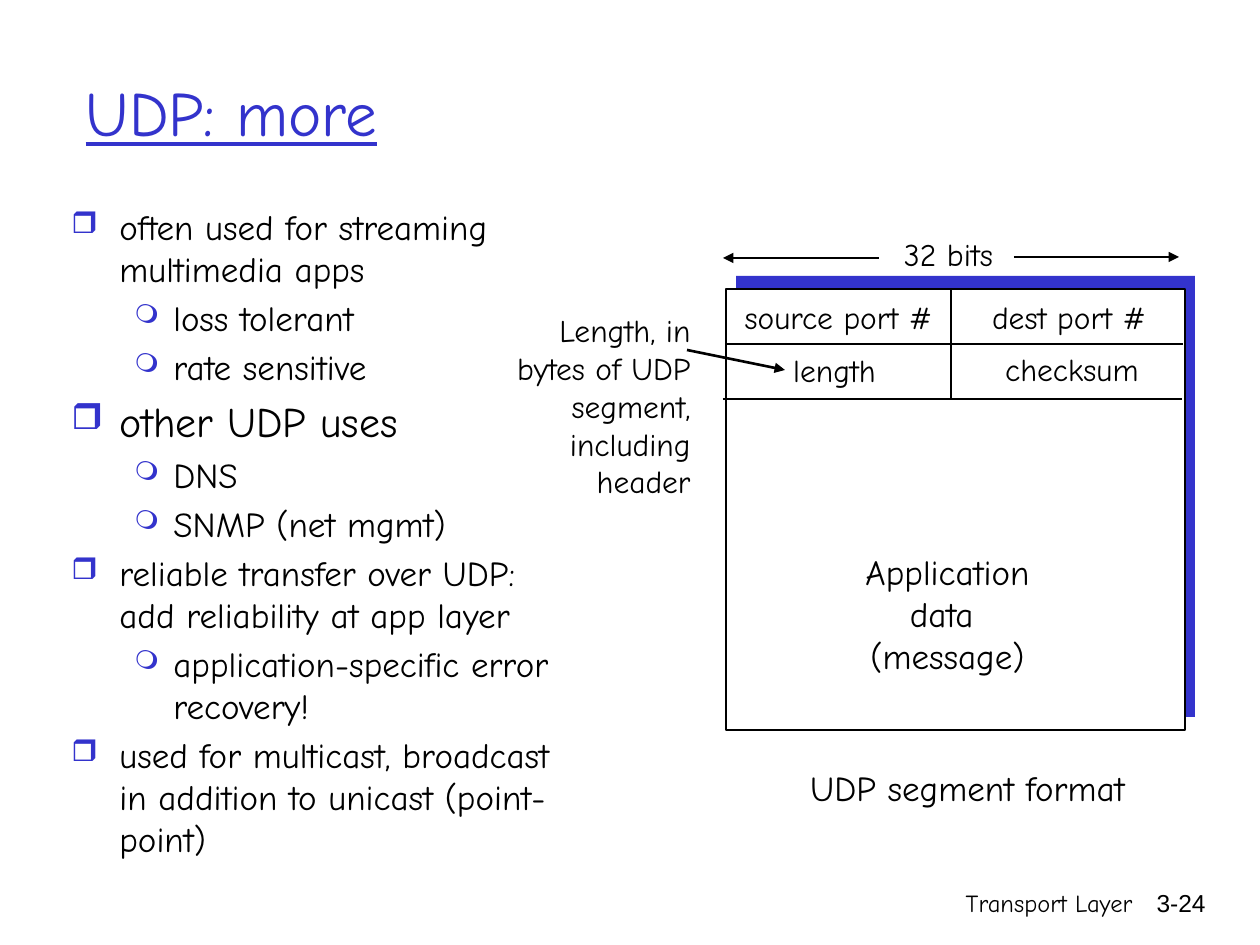
from dataclasses import dataclass

from lxml.etree import SubElement
from pptx import Presentation
from pptx.dml.color import RGBColor
from pptx.enum.shapes import MSO_CONNECTOR, MSO_SHAPE
from pptx.enum.text import MSO_ANCHOR, MSO_AUTO_SIZE, PP_ALIGN
from pptx.oxml.ns import qn
from pptx.util import Emu, Pt


@dataclass(frozen=True)
class Theme:
    accent: str = "3333CC"
    ink: str = "000000"
    paper: str = "FFFFFF"
    font: str = "Comic Neue"
    number_font: str = "Arial"
    title: int = 36
    large: int = 24
    body: int = 20
    label: int = 18
    footer: int = 14
    line: float = 1.5


T = Theme()
LEFT, CENTER, RIGHT = PP_ALIGN.LEFT, PP_ALIGN.CENTER, PP_ALIGN.RIGHT

TITLE = ("UDP: more", (73, 32, 1149, 158))
BODY_BOX = (59, 199, 525, 640)
BULLETS = [
    (0, "often used for streaming multimedia apps", T.body),
    (1, "loss tolerant", T.body),
    (1, "rate sensitive", T.body),
    (0, "other UDP uses", T.large),
    (1, "DNS", T.body),
    (1, "SNMP (net mgmt)", T.body),
    (0, "reliable transfer over UDP: add reliability at app layer", T.body),
    (1, "application-specific error recovery!", T.body),
    (0, "used for multicast, broadcast in addition to unicast (point-point)", T.body),
]
LEVELS = [
    {"char": "❒", "percent": 85, "margin": 48, "hang": 48},
    {"char": "❍", "percent": 75, "margin": 102, "hang": 39},
]
FOOTERS = [
    ("Transport Layer", (746, 882, 399, 63), T.font),
    ("3-24", (1125, 882, 93, 63), T.number_font),
]
PANELS = [
    ((736, 276, 459, 441), T.accent, None),
    ((726, 289, 459, 441), T.paper, T.ink),
]
LABELS = [
    (["source port #"], (723, 292, 231, 50), T.label, CENTER),
    (["dest port #"], (969, 292, 200, 50), T.label, CENTER),
    (["length"], (776, 345, 117, 50), T.label, CENTER),
    (["checksum"], (989, 344, 166, 50), T.label, CENTER),
    (["32 bits"], (883, 229, 131, 50), T.label, CENTER),
    (["Application", "data ", "(message)"], (844, 544, 207, 139), T.body, CENTER),
    (["UDP segment format"], (785, 760, 365, 54), T.body, CENTER),
    (["Length, in", "bytes of UDP", "segment,", "including", "header"],
     (481, 305, 222, 202), T.label, RIGHT),
]
RULES = [
    (725, 344, 1183, 344),
    (723, 399, 1182, 399),
    (951, 343, 951, 289),
    (951, 399, 951, 345),
]
ARROWS = [
    (1014, 257, 1179, 257),
    (879, 258, 723, 258),
    (687, 350, 785, 370),
]


def px(n):
    return Emu(round(n * 914400 / 126))


def place(box):
    return [px(n) for n in box]


def rgb(color):
    return RGBColor.from_string(color)


def add_run(p, text, size, color=T.ink, font=T.font):
    r = p.add_run()
    r.text = text
    r.font.size = Pt(size)
    r.font.name = font
    r.font.color.rgb = rgb(color)
    return r


def add_text(s, lines, box, size, align, wrap=False, font=T.font):
    tf = s.shapes.add_textbox(*place(box)).text_frame
    tf.word_wrap = wrap
    for i, line in enumerate(lines):
        p = tf.paragraphs[0] if i == 0 else tf.add_paragraph()
        p.alignment = align
        add_run(p, line, size, font=font)


def add_title(s, text, box):
    sp = s.shapes.title
    sp.left, sp.top, sp.width, sp.height = place(box)
    tf = sp.text_frame
    tf.auto_size = MSO_AUTO_SIZE.NONE
    tf.vertical_anchor = MSO_ANCHOR.MIDDLE
    p = tf.paragraphs[0]
    p.alignment = LEFT
    add_run(p, text, T.title, T.accent).font.underline = True


def format_bullet(p, level):
    style = LEVELS[level]
    p.level = level
    pPr = p._p.get_or_add_pPr()
    pPr.set("marL", str(px(style["margin"])))
    pPr.set("indent", str(-px(style["hang"])))
    before = SubElement(pPr, qn("a:spcBef"))
    SubElement(before, qn("a:spcPct"), val="20000")
    color = SubElement(pPr, qn("a:buClr"))
    SubElement(color, qn("a:srgbClr"), val=T.accent)
    SubElement(pPr, qn("a:buSzPct"), val=str(style["percent"] * 1000))
    SubElement(pPr, qn("a:buChar"), char=style["char"])


def add_bullets(s):
    tf = s.shapes.add_textbox(*place(BODY_BOX)).text_frame
    tf.word_wrap = True
    for i, (level, text, size) in enumerate(BULLETS):
        p = tf.paragraphs[0] if i == 0 else tf.add_paragraph()
        format_bullet(p, level)
        add_run(p, text, size)


def add_panel(s, box, fill, line):
    sp = s.shapes.add_shape(MSO_SHAPE.RECTANGLE, *place(box))
    sp.shadow.inherit = False
    sp.fill.solid()
    sp.fill.fore_color.rgb = rgb(fill)
    if line:
        sp.line.color.rgb = rgb(line)
        sp.line.width = Pt(T.line)
    else:
        sp.line.fill.background()


def add_line(s, ends, arrow=False):
    c = s.shapes.add_connector(MSO_CONNECTOR.STRAIGHT, *place(ends))
    c.line.color.rgb = rgb(T.ink)
    c.line.width = Pt(T.line)
    if arrow:
        SubElement(c.line._get_or_add_ln(), qn("a:tailEnd"), type="triangle")
    SubElement(c._element.spPr, qn("a:effectLst"))


def main():
    prs = Presentation()
    prs.slide_width, prs.slide_height = px(1260), px(945)
    s = prs.slides.add_slide(prs.slide_layouts[5])
    for text, box, font in FOOTERS:
        add_text(s, [text], box, T.footer, RIGHT, True, font)
    add_title(s, *TITLE)
    add_bullets(s)
    for panel in PANELS:
        add_panel(s, *panel)
    for ends in RULES:
        add_line(s, ends)
    for label in LABELS:
        add_text(s, *label)
    for ends in ARROWS:
        add_line(s, ends, arrow=True)
    prs.save("out.pptx")


if __name__ == "__main__":
    main()
